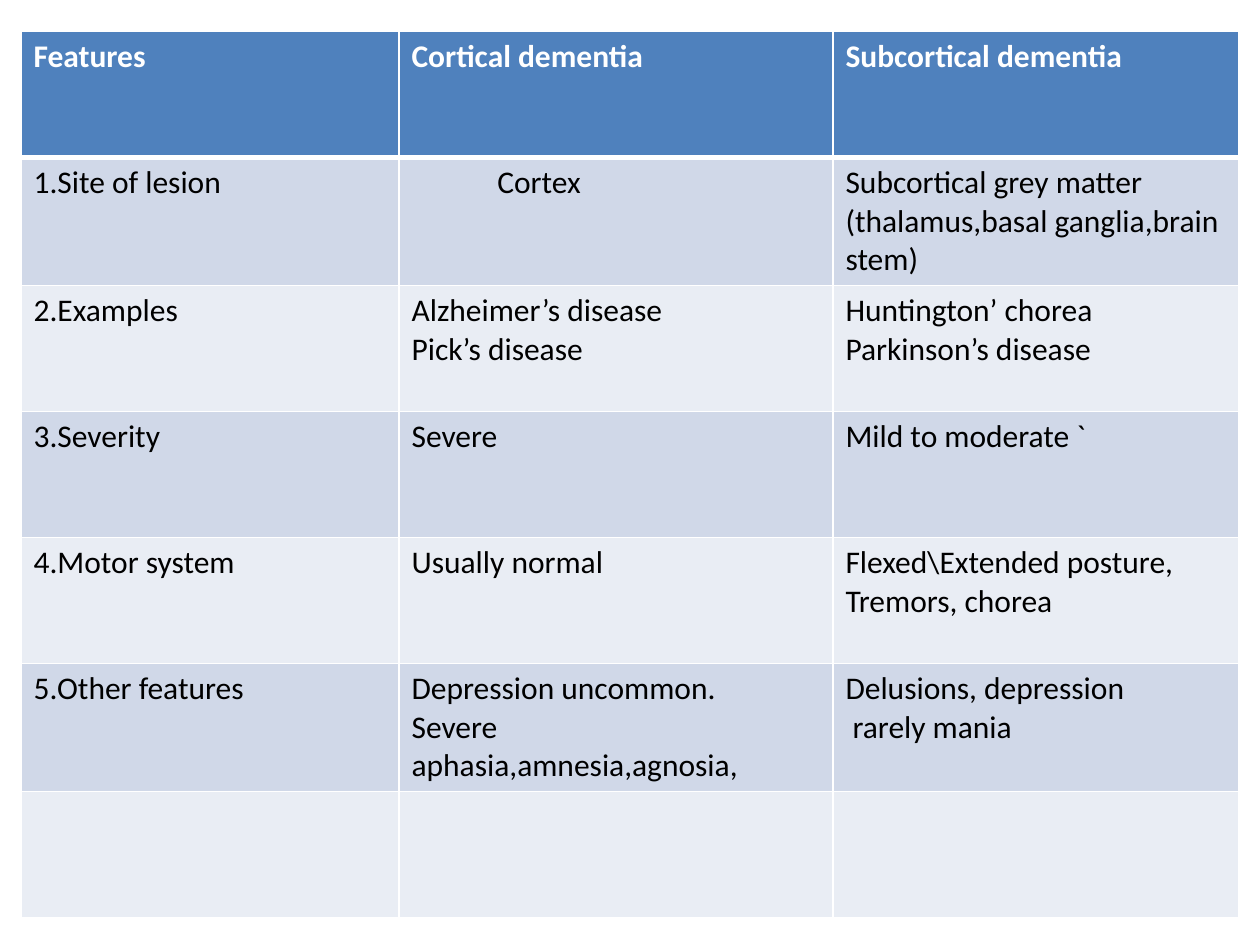
"""Build a slide with a table comparing cortical and subcortical dementia."""
from lxml import etree
from pptx import Presentation
from pptx.dml.color import RGBColor
from pptx.oxml.ns import qn
from pptx.util import Pt

WHITE = RGBColor(0xFF, 0xFF, 0xFF)
BLACK = RGBColor(0x00, 0x00, 0x00)
HEADER_BLUE = RGBColor(0x4F, 0x81, 0xBD)
BAND_DARK = RGBColor(0xD0, 0xD8, 0xE8)
BAND_LIGHT = RGBColor(0xE9, 0xED, 0xF4)

COLUMN_WIDTHS = [216, 248, 232]
ROW_HEIGHT = 72
INDENTS = {"Cortex": 49, "rarely mania": 4}
ROWS = [
    ["Features", "Cortical dementia", "Subcortical dementia"],
    ["1.Site of lesion", "Cortex",
     "Subcortical grey matter\n(thalamus,basal ganglia,brain stem)"],
    ["2.Examples", "Alzheimer’s disease\nPick’s disease",
     "Huntington’ chorea\nParkinson’s disease"],
    ["3.Severity", "Severe", "Mild to moderate `"],
    ["4.Motor system", "Usually normal",
     r"Flexed\Extended posture," "\nTremors, chorea"],
    ["5.Other features", "Depression uncommon.\nSevere aphasia,amnesia,agnosia,",
     "Delusions, depression\nrarely mania"],
    ["", "", ""],
]


def write_cell(cell, text, *, color, bold):
    cell.text = text
    for para in cell.text_frame.paragraphs:
        para.font.size = Pt(18)
        if para.text in INDENTS:
            indent = Pt(INDENTS[para.text])
            para._p.get_or_add_pPr().set("marL", str(indent))
        for span in para.runs:
            span.font.name = "Calibri"
            span.font.size = Pt(18)
            span.font.bold = bold
            span.font.color.rgb = color


def draw_borders(cell, *, top, bottom):
    properties = cell._tc.get_or_add_tcPr()
    for side, width in (("L", 1), ("R", 1), ("T", top), ("B", bottom)):
        line = etree.SubElement(properties, qn(f"a:ln{side}"), w=str(Pt(width)))
        fill = etree.SubElement(line, qn("a:solidFill"))
        etree.SubElement(fill, qn("a:srgbClr"), val=str(WHITE))


deck = Presentation()
deck.slide_width = Pt(720)
deck.slide_height = Pt(540)
page = deck.slides.add_slide(deck.slide_layouts[6])

table = page.shapes.add_table(
    len(ROWS), len(COLUMN_WIDTHS), Pt(12), Pt(18),
    Pt(sum(COLUMN_WIDTHS)), Pt(ROW_HEIGHT * len(ROWS))).table
for column, width in zip(table.columns, COLUMN_WIDTHS):
    column.width = Pt(width)

for row_index, texts in enumerate(ROWS):
    table.rows[row_index].height = Pt(ROW_HEIGHT)
    is_header = row_index == 0
    band = BAND_DARK if row_index % 2 else BAND_LIGHT
    for column_index, text in enumerate(texts):
        cell = table.cell(row_index, column_index)
        write_cell(cell, text, color=WHITE if is_header else BLACK, bold=is_header)
        draw_borders(cell, top=3 if row_index == 1 else 1, bottom=3 if is_header else 1)
        cell.fill.solid()
        cell.fill.fore_color.rgb = HEADER_BLUE if is_header else band

deck.save("out.pptx")
